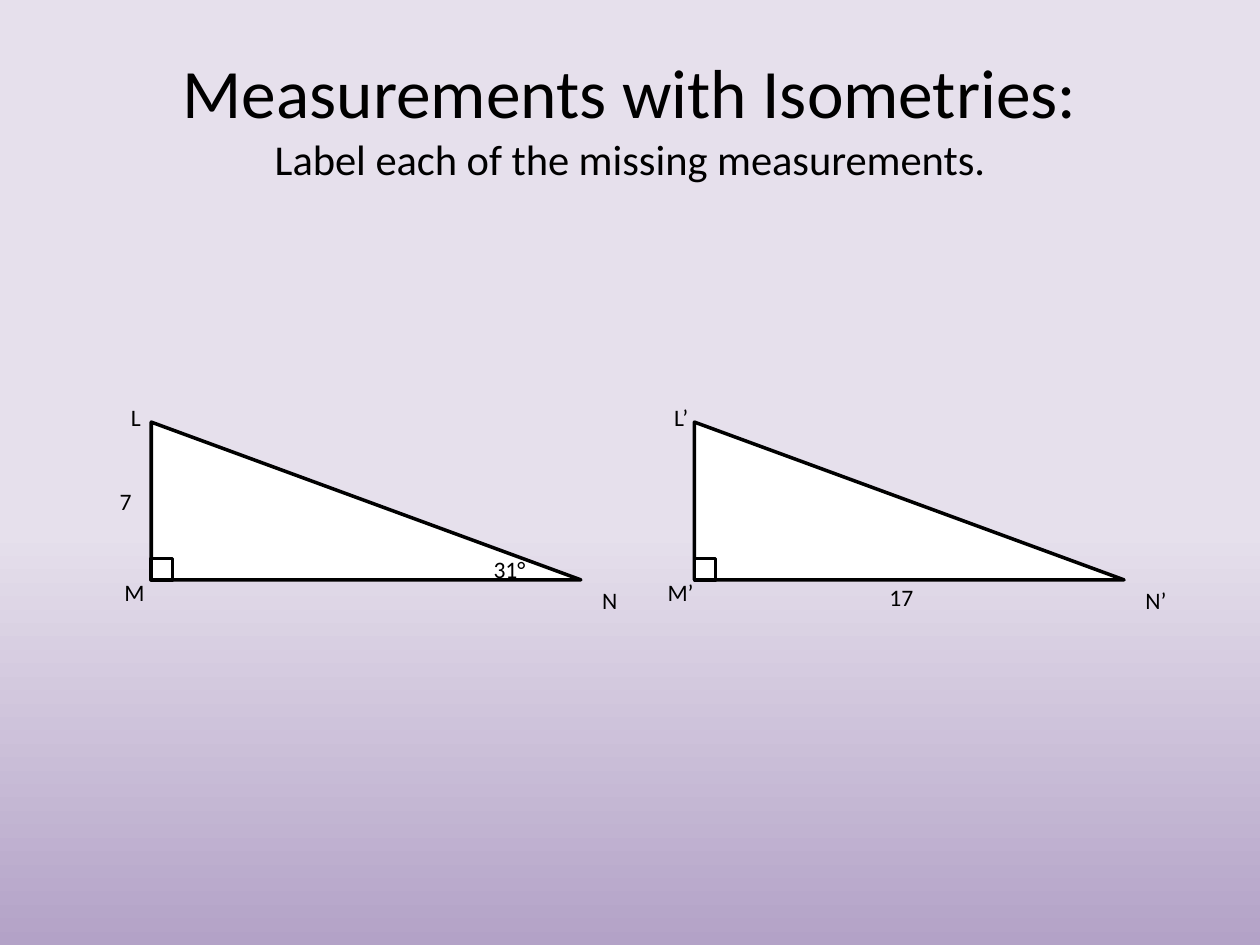
from pptx import Presentation
from pptx import util as u
from pptx.dml.color import RGBColor
from pptx.enum import shapes, text

Cm = u.Cm
BLACK = RGBColor(0, 0, 0)
WHITE = RGBColor(255, 255, 255)
PALE = RGBColor(0xE6, 0xE0, 0xEC)
LILAC = RGBColor(0xB3, 0xA2, 0xC7)

FONT = "Calibri"
LEGS = 8.66, 3.18   # base and height of each triangle
CORNER = 0.43       # side of the right-angle mark


def shade(slide):
    """Fill the background, pale down to 56 % and then to lilac."""
    fill = slide.background.fill
    fill.gradient()
    fill.gradient_angle = 270
    for stop, place, tone in zip(fill.gradient_stops, (0.56, 1), (PALE, LILAC)):
        stop.position = place
        stop.color.rgb = tone


def write(parent, lines, x, y, w, h=0.84, sizes=(13.5,), wrap=False,
          align=text.PP_ALIGN.LEFT, anchor=text.MSO_ANCHOR.TOP):
    """Add a text box whose lines share one paragraph."""
    frame = parent.add_textbox(Cm(x), Cm(y), Cm(w), Cm(h)).text_frame
    frame.word_wrap = wrap
    frame.vertical_anchor = anchor
    para = frame.paragraphs[0]
    para.alignment = align
    for i, (line, size) in enumerate(zip(lines, sizes)):
        if i:
            para.add_line_break()
        run = para.add_run()
        run.text = line
        run.font.name = FONT
        run.font.size = u.Pt(size)
        run.font.color.rgb = BLACK


def draw(parent, kind, x, y, w, h):
    """Add a white shape with a black outline."""
    shape = parent.add_shape(kind, Cm(x), Cm(y), Cm(w), Cm(h))
    shape.shadow.inherit = False
    shape.fill.solid()
    shape.fill.fore_color.rgb = WHITE
    shape.line.color.rgb = BLACK
    shape.line.width = u.Pt(2)


def triangle(slide, x, y, mark="", extra=0):
    """Group a right triangle with its corner mark and vertex labels."""
    group = slide.shapes.add_group_shape().shapes
    kinds = shapes.MSO_SHAPE
    base, height = LEGS
    draw(group, kinds.RIGHT_TRIANGLE, x, y, base, height)
    for name, dx, dy, w in (("L", -0.66, -0.51, 0.71),
                            ("N", 8.84, 3.18, 0.81),
                            ("M", -0.79, 3.02, 0.91)):
        write(group, [name + mark], x + dx, y + dy, w + extra)
    draw(group, kinds.RECTANGLE, x, y + height - CORNER, CORNER, CORNER)


def main():
    deck = Presentation()
    deck.slide_width, deck.slide_height = Cm(25.4), Cm(19.05)
    slide = deck.slides.add_slide(deck.slide_layouts[6])
    shade(slide)

    # Title and task
    write(slide.shapes,
          ["Measurements with Isometries:",
           "Label each of the missing measurements."],
          1.27, 0.76, 22.86, 3.18, sizes=(39.6, 24.3), wrap=True,
          align=text.PP_ALIGN.CENTER, anchor=text.MSO_ANCHOR.MIDDLE)

    # Triangle and its image
    triangle(slide, 3.05, 8.51)
    triangle(slide, 14, 8.51, mark="’", extra=0.12)

    # Known measurements
    for value, x, y, w in (("31°", 9.7, 11.07, 1.17),
                           ("7", 2.16, 9.7, 0.76),
                           ("17", 17.68, 11.63, 0.99)):
        write(slide.shapes, [value], x, y, w)

    deck.save("out.pptx")


if __name__ == "__main__":
    main()
